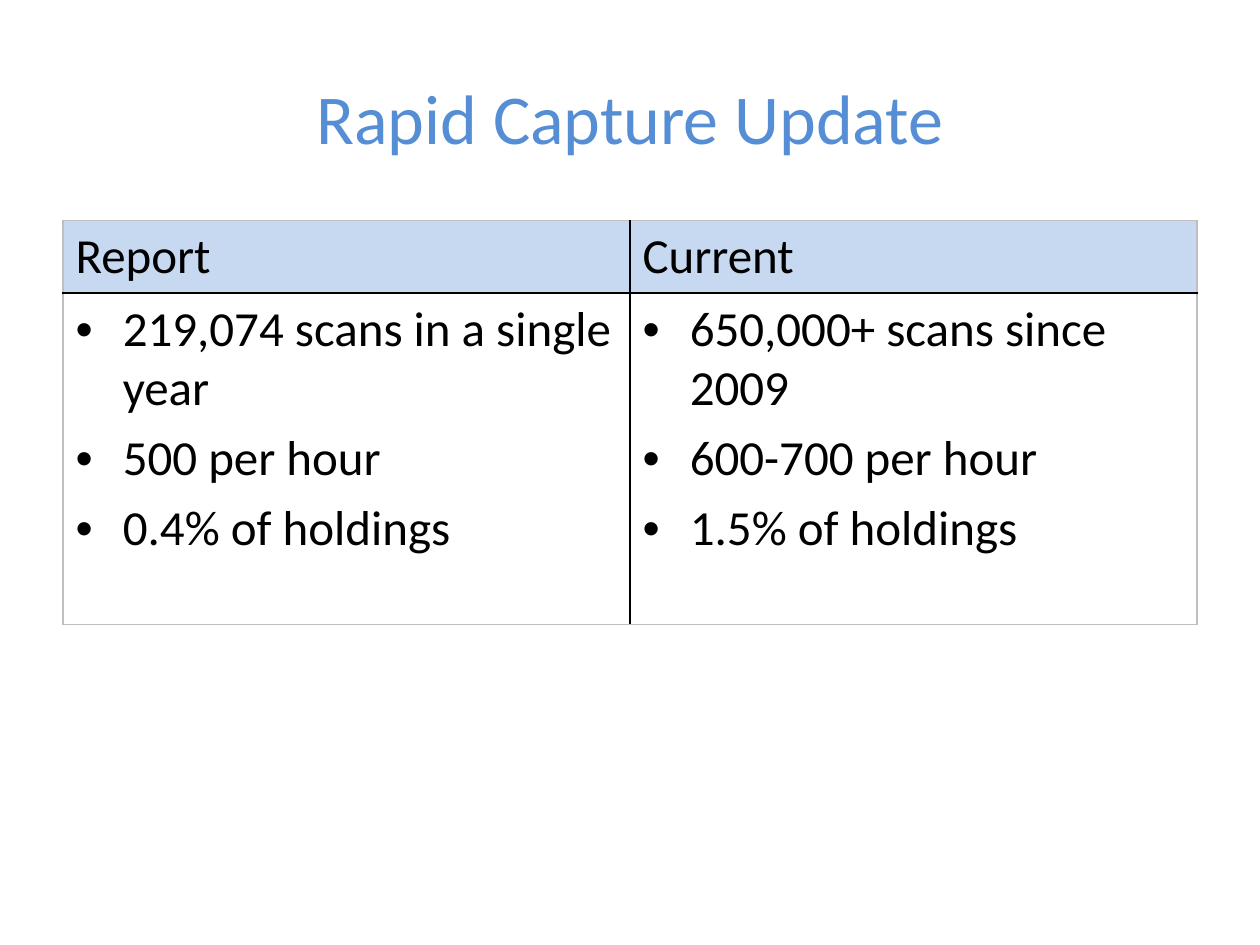
"""Build the Rapid Capture Update slide with its two-column comparison table."""
import dataclasses

import lxml.etree
import pptx
import pptx.dml.color
import pptx.enum.text
import pptx.oxml.ns
import pptx.table
import pptx.util

Pt = pptx.util.Pt
RGBColor = pptx.dml.color.RGBColor


@dataclasses.dataclass(frozen=True)
class Theme:
    font: str = "Calibri"
    title_size: float = 40
    body_size: float = 28
    title_color: str = "558ED5"
    text_color: str = "000000"
    header_fill: str = "C6D9F1"
    inner_line: str = "000000"
    outer_line: str = "BFBFBF"
    inner_width: float = 1
    outer_width: float = 0.75


@dataclasses.dataclass(frozen=True)
class Column:
    heading: str
    points: tuple[str, ...]


THEME = Theme()
COLUMNS = (
    Column("Report", ("219,074 scans in a single year", "500 per hour", "0.4% of holdings")),
    Column("Current", ("650,000+ scans since 2009", "600-700 per hour", "1.5% of holdings")),
)
MARGIN = 36
CONTENT_WIDTH = 648
ROW_HEIGHTS = (41.5, 189.5)
BULLET_INDENT = 27


def add_child(parent, tag: str, **attributes: str):
    """Append a DrawingML element to its parent."""
    return lxml.etree.SubElement(parent, pptx.oxml.ns.qn(tag), **attributes)


def style_text(paragraph, size: float, color: str) -> None:
    """Apply the theme font to a paragraph."""
    paragraph.font.name = THEME.font
    paragraph.font.size = Pt(size)
    paragraph.font.color.rgb = RGBColor.from_string(color)


def add_bullet(paragraph) -> None:
    """Give a paragraph a hanging round bullet."""
    paragraph.space_before = Pt(THEME.body_size * 0.2)
    properties = paragraph._p.get_or_add_pPr()
    properties.set("marL", str(Pt(BULLET_INDENT)))
    properties.set("indent", str(-Pt(BULLET_INDENT)))
    bullet_font = add_child(properties, "a:buFont", typeface="Arial")
    bullet = add_child(properties, "a:buChar", char="•")
    default_run = properties.find(pptx.oxml.ns.qn("a:defRPr"))
    if default_run is not None:
        default_run.addprevious(bullet_font)
        default_run.addprevious(bullet)


def draw_borders(cell: pptx.table._Cell, outer_edges: dict[str, bool]) -> None:
    """Draw the four cell edges, with a lighter line around the table."""
    properties = cell._tc.get_or_add_tcPr()
    for edge, is_outer in outer_edges.items():
        width = THEME.outer_width if is_outer else THEME.inner_width
        color = THEME.outer_line if is_outer else THEME.inner_line
        line = add_child(properties, f"a:ln{edge}", w=str(Pt(width)))
        add_child(add_child(line, "a:solidFill"), "a:srgbClr", val=color)


def fill_cell(cell: pptx.table._Cell, lines: tuple[str, ...], is_header: bool) -> None:
    """Write the text and set the background of a cell."""
    cell.text = "\n".join(lines)
    for paragraph in cell.text_frame.paragraphs:
        style_text(paragraph, THEME.body_size, THEME.text_color)
        if not is_header:
            add_bullet(paragraph)
    if is_header:
        cell.fill.solid()
        cell.fill.fore_color.rgb = RGBColor.from_string(THEME.header_fill)
    else:
        cell.fill.background()


def add_title(slide, text: str) -> None:
    """Add the centred slide title."""
    frame = slide.shapes.add_textbox(Pt(MARGIN), Pt(21.6), Pt(CONTENT_WIDTH), Pt(90)).text_frame
    frame.word_wrap = True
    frame.vertical_anchor = pptx.enum.text.MSO_ANCHOR.MIDDLE
    paragraph = frame.paragraphs[0]
    paragraph.text = text
    paragraph.alignment = pptx.enum.text.PP_ALIGN.CENTER
    style_text(paragraph, THEME.title_size, THEME.title_color)


def add_comparison(slide, columns: tuple[Column, ...]) -> None:
    """Add the table with a heading row above a row of bullet lists."""
    table = slide.shapes.add_table(
        len(ROW_HEIGHTS), len(columns), Pt(MARGIN), Pt(126), Pt(CONTENT_WIDTH), Pt(sum(ROW_HEIGHTS))
    ).table
    table.first_row = False
    table.horz_banding = False
    for row, height in zip(table.rows, ROW_HEIGHTS):
        row.height = Pt(height)
    for column_index, column in enumerate(columns):
        table.columns[column_index].width = Pt(CONTENT_WIDTH / len(columns))
        for row_index, lines in enumerate(((column.heading,), column.points)):
            cell = table.cell(row_index, column_index)
            outer_edges = {
                "L": column_index == 0,
                "R": column_index == len(columns) - 1,
                "T": row_index == 0,
                "B": row_index == len(ROW_HEIGHTS) - 1,
            }
            draw_borders(cell, outer_edges)
            fill_cell(cell, lines, is_header=row_index == 0)


def main() -> None:
    """Create and save the presentation."""
    presentation = pptx.Presentation()
    presentation.slide_width = Pt(720)
    presentation.slide_height = Pt(540)
    slide = presentation.slides.add_slide(presentation.slide_layouts[6])
    add_title(slide, "Rapid Capture Update")
    add_comparison(slide, COLUMNS)
    presentation.save("out.pptx")


if __name__ == "__main__":
    main()
